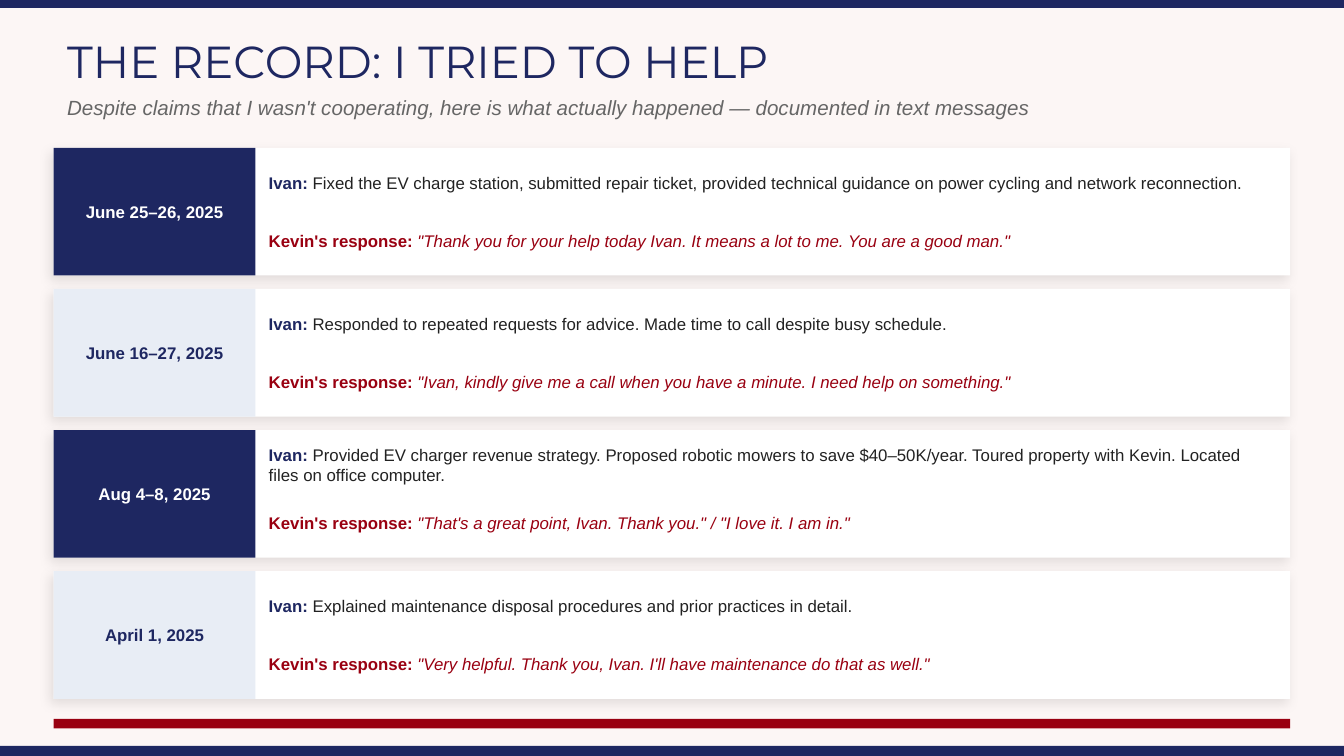
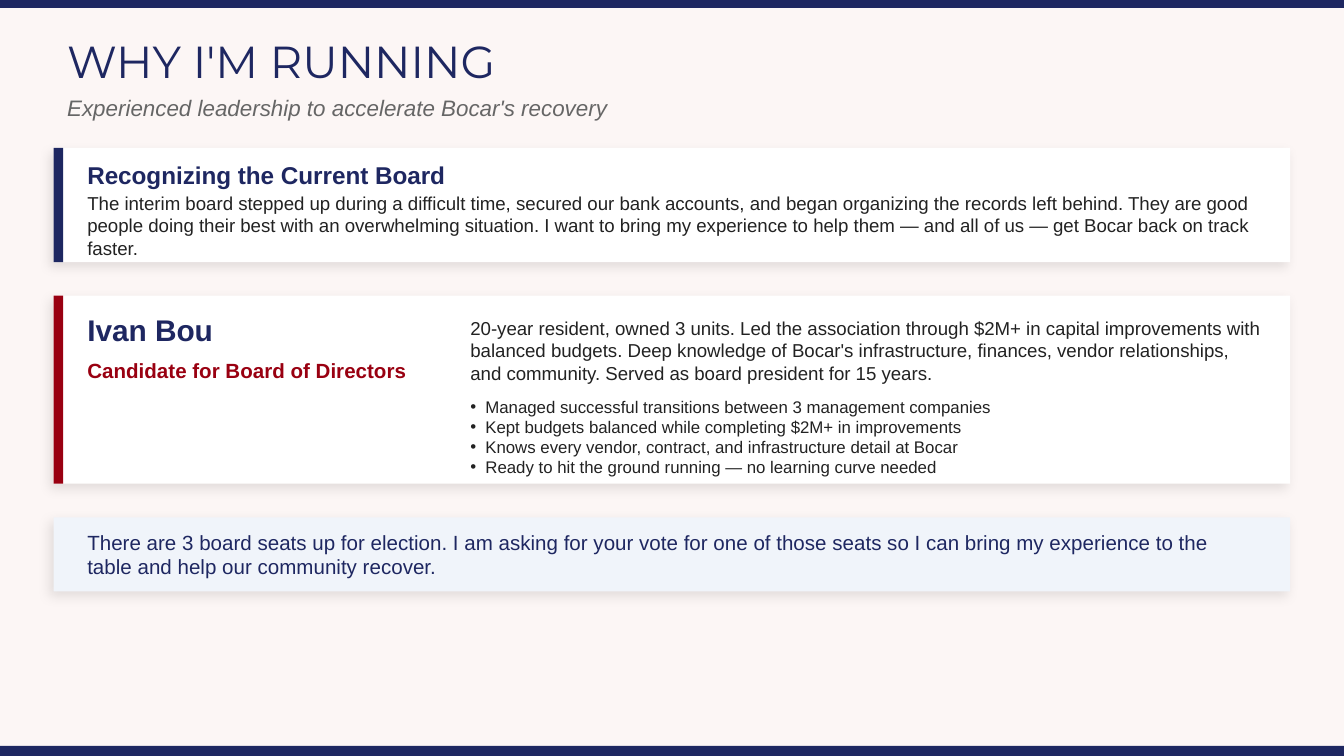
from dataclasses import dataclass

from lxml.etree import SubElement
from pptx import Presentation
from pptx.dml.color import RGBColor
from pptx.enum.shapes import MSO_SHAPE
from pptx.enum.text import MSO_ANCHOR, PP_ALIGN
from pptx.oxml.ns import qn
from pptx.util import Inches, Pt


@dataclass(frozen=True)
class Theme:
    cream: str = "FCF6F5"
    navy: str = "1E2761"
    red: str = "990011"
    white: str = "FFFFFF"
    mist: str = "E8EDF5"
    ice: str = "F0F4FA"
    ink: str = "222222"
    grey: str = "666666"
    heading_font: str = "Montserrat"
    body_font: str = "Arial"
    title: int = 24
    name: int = 16
    heading: int = 13
    subtitle: int = 12
    lead: int = 11
    body: int = 10
    small: int = 9


THEME = Theme()

# The slide is a grid of 100 columns by 56.25 rows of square cells.
COLUMNS, ROWS = 100, 56.25
CELL = Inches(10) / COLUMNS
MARGIN = 4
CONTENT_WIDTH = COLUMNS - 2 * MARGIN
CONTENT_TOP = 11
ACCENT = 0.7
INSET = 6.5
INSET_WIDTH = 87

RECORD = [
    ("June 25–26, 2025",
     "Fixed the EV charge station, submitted repair ticket, provided technical "
     "guidance on power cycling and network reconnection.",
     '"Thank you for your help today Ivan. It means a lot to me. You are a good man."'),
    ("June 16–27, 2025",
     "Responded to repeated requests for advice. Made time to call despite busy schedule.",
     '"Ivan, kindly give me a call when you have a minute. I need help on something."'),
    ("Aug 4–8, 2025",
     "Provided EV charger revenue strategy. Proposed robotic mowers to save $40–50K/year. "
     "Toured property with Kevin. Located files on office computer.",
     '"That\'s a great point, Ivan. Thank you." / "I love it. I am in."'),
    ("April 1, 2025",
     "Explained maintenance disposal procedures and prior practices in detail.",
     '"Very helpful. Thank you, Ivan. I\'ll have maintenance do that as well."'),
]

STRENGTHS = [
    "Managed successful transitions between 3 management companies",
    "Kept budgets balanced while completing $2M+ in improvements",
    "Knows every vendor, contract, and infrastructure detail at Bocar",
    "Ready to hit the ground running — no learning curve needed",
]


def cells(*lengths):
    return [round(length * CELL) for length in lengths]


def add_run(paragraph, words, size, color, bold=False, italic=False, font=THEME.body_font):
    run = paragraph.add_run()
    run.text = words
    run.font.name = font
    run.font.size = Pt(size)
    run.font.bold = bold
    run.font.italic = italic
    run.font.color.rgb = RGBColor.from_string(color)


def prepare_frame(holder):
    """Wrap the text, centre it vertically and drop the insets."""
    frame = holder.text_frame
    frame.word_wrap = True
    frame.vertical_anchor = MSO_ANCHOR.MIDDLE
    frame.margin_left = frame.margin_top = frame.margin_right = frame.margin_bottom = 0
    return frame


def add_frame(slide, left, top, width, height):
    return prepare_frame(slide.shapes.add_textbox(*cells(left, top, width, height)))


def add_line(slide, area, *args, **style):
    """One paragraph in one style, in an area of (left, top, width, height)."""
    add_run(add_frame(slide, *area).paragraphs[0], *args, **style)


def add_labelled(slide, area, label, label_color, words, color, italic=False):
    paragraph = add_frame(slide, *area).paragraphs[0]
    add_run(paragraph, label, THEME.small, label_color, bold=True)
    add_run(paragraph, words, THEME.small, color, italic=italic)


def add_block(slide, left, top, width, height, color):
    block = slide.shapes.add_shape(MSO_SHAPE.RECTANGLE, *cells(left, top, width, height))
    block.shadow.inherit = False
    block.fill.solid()
    block.fill.fore_color.rgb = RGBColor.from_string(color)
    block.line.fill.background()
    return block


def add_card(slide, top, height, color=THEME.white, accent=None):
    """A full-width panel with a soft shadow and, if asked, a bar on its left edge."""
    card = add_block(slide, MARGIN, top, CONTENT_WIDTH, height, color)
    effects = card.element.spPr.find(qn("a:effectLst"))
    shadow = SubElement(effects, qn("a:outerShdw"), blurRad=str(Pt(6)), dist=str(Pt(3)),
                        dir=str(135 * 60000), algn="bl", rotWithShape="0")
    tint = SubElement(shadow, qn("a:srgbClr"), val="000000")
    SubElement(tint, qn("a:alpha"), val="10000")
    if accent:
        add_block(slide, MARGIN, top, ACCENT, height, accent)


def add_bullets(slide, left, top, width, items, pitch):
    frame = add_frame(slide, left, top, width, pitch * len(items))
    for index, item in enumerate(items):
        paragraph = frame.add_paragraph() if index else frame.paragraphs[0]
        paragraph.line_spacing = Pt(pitch * CELL / Pt(1))
        indent, = cells(1.12)
        properties = paragraph._p.get_or_add_pPr()
        properties.set("marL", str(indent))
        properties.set("indent", str(-indent))
        SubElement(properties, qn("a:buFont"), typeface=THEME.body_font)
        SubElement(properties, qn("a:buChar"), char="•")
        add_run(paragraph, item, THEME.small, THEME.ink)


def add_slide(deck, title, subtitle, subtitle_size):
    slide = deck.slides.add_slide(deck.slide_layouts[6])
    slide.background.fill.solid()
    slide.background.fill.fore_color.rgb = RGBColor.from_string(THEME.cream)
    add_block(slide, 0, 0, COLUMNS, 0.6, THEME.navy)
    add_block(slide, 0, 55.5, COLUMNS, ROWS - 55.5, THEME.navy)
    add_line(slide, (5, 2, 90, 5), title, THEME.title, THEME.navy, font=THEME.heading_font)
    add_line(slide, (5, 6.5, 90, 3), subtitle, subtitle_size, THEME.grey, italic=True)
    return slide


def add_record_row(slide, top, height, dark, date, action, reply):
    add_card(slide, top, height)
    date_block = add_block(slide, MARGIN, top, 15, height, THEME.navy if dark else THEME.mist)
    date_line = prepare_frame(date_block).paragraphs[0]
    date_line.alignment = PP_ALIGN.CENTER
    add_run(date_line, date, THEME.small, THEME.white if dark else THEME.navy, bold=True)
    add_labelled(slide, (20, top + 0.5, 74, 4.2), "Ivan: ", THEME.navy, action, THEME.ink)
    add_labelled(slide, (20, top + 5, 74, 3.8), "Kevin's response: ", THEME.red,
                 reply, THEME.red, italic=True)


def build_record(deck):
    slide = add_slide(
        deck, "THE RECORD: I TRIED TO HELP",
        "Despite claims that I wasn't cooperating, here is what actually happened "
        "— documented in text messages", THEME.lead)
    height, gap = 9.5, 1
    for index, entry in enumerate(RECORD):
        add_record_row(slide, CONTENT_TOP + index * (height + gap), height,
                       index % 2 == 0, *entry)
    add_block(slide, MARGIN, 53.5, CONTENT_WIDTH, 0.7, THEME.red)


def build_candidacy(deck):
    slide = add_slide(deck, "WHY I'M RUNNING",
                      "Experienced leadership to accelerate Bocar's recovery", THEME.subtitle)
    gap = 2.5
    board_height, candidate_height, appeal_height = 8.5, 14, 5.5

    board = CONTENT_TOP
    add_card(slide, board, board_height, accent=THEME.navy)
    add_line(slide, (INSET, board + 0.5, INSET_WIDTH, 3), "Recognizing the Current Board",
             THEME.heading, THEME.navy, bold=True)
    add_line(slide, (INSET, board + 3.5, INSET_WIDTH, 4.5),
             "The interim board stepped up during a difficult time, secured our bank accounts, "
             "and began organizing the records left behind. They are good people doing their "
             "best with an overwhelming situation. I want to bring my experience to help them "
             "— and all of us — get Bocar back on track faster.", THEME.body, THEME.ink)

    candidate = board + board_height + gap
    add_card(slide, candidate, candidate_height, accent=THEME.red)
    add_line(slide, (INSET, candidate + 0.8, 30, 3.5), "Ivan Bou",
             THEME.name, THEME.navy, bold=True)
    add_line(slide, (INSET, candidate + 4.3, 30, 2.5), "Candidate for Board of Directors",
             THEME.lead, THEME.red, bold=True)
    add_line(slide, (35, candidate + 0.8, 59, 6.5),
             "20-year resident, owned 3 units. Led the association through $2M+ in capital "
             "improvements with balanced budgets. Deep knowledge of Bocar's infrastructure, "
             "finances, vendor relationships, and community. Served as board president for "
             "15 years.", THEME.body, THEME.ink)
    add_bullets(slide, 35, candidate + 7.5, 59, STRENGTHS, pitch=1.5)

    appeal = candidate + candidate_height + gap
    add_card(slide, appeal, appeal_height, THEME.ice)
    add_line(slide, (INSET, appeal + 0.5, INSET_WIDTH, 4.5),
             "There are 3 board seats up for election. I am asking for your vote for one of "
             "those seats so I can bring my experience to the table and help our community "
             "recover.", THEME.lead, THEME.navy)


def main():
    deck = Presentation()
    deck.slide_width, deck.slide_height = cells(COLUMNS, ROWS)
    build_record(deck)
    build_candidacy(deck)
    deck.save("out.pptx")


if __name__ == "__main__":
    main()
